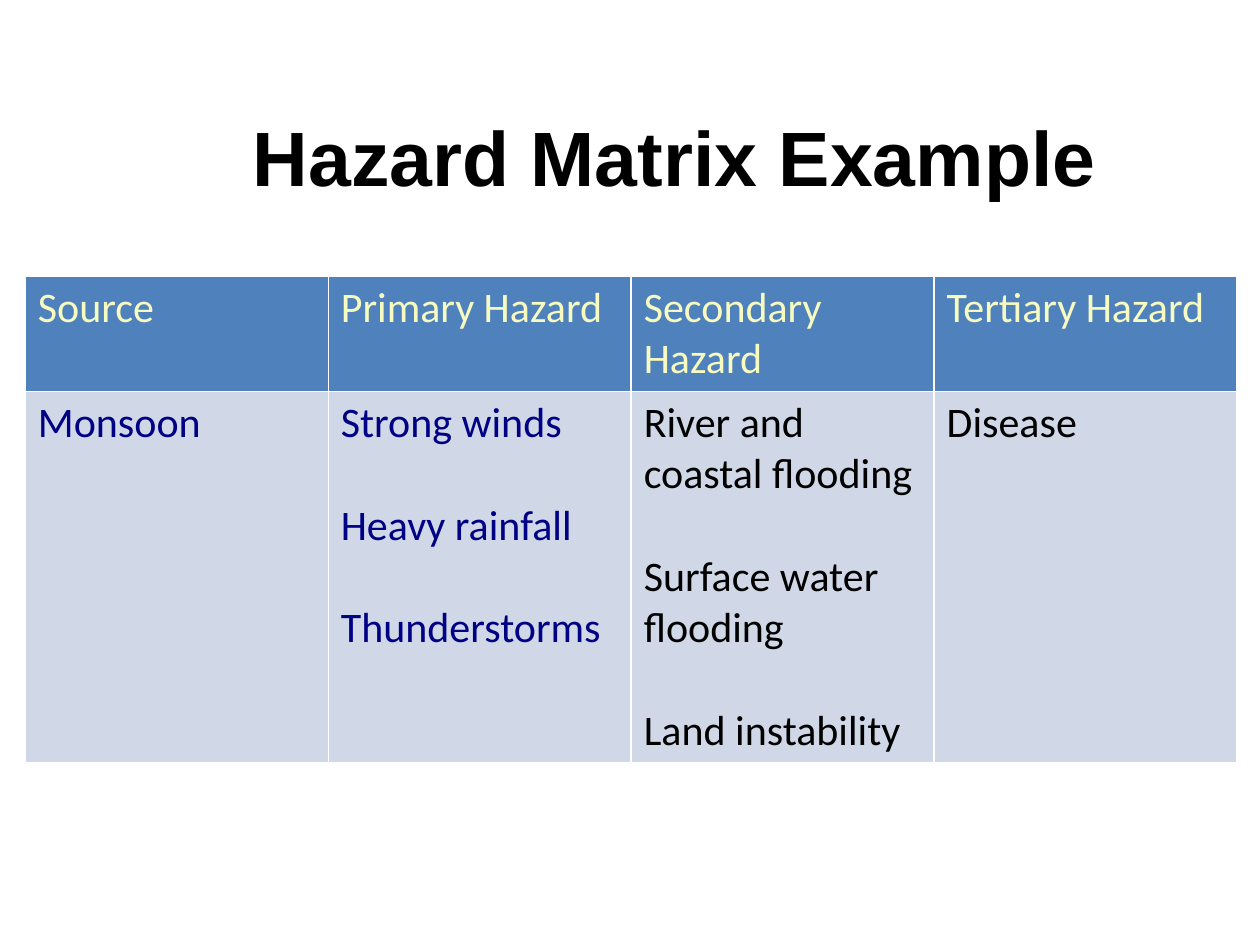
"""Build the hazard matrix slide."""
from lxml.etree import SubElement as Sub
from pptx import Presentation
from pptx.dml.color import RGBColor as Rgb
from pptx.enum.text import MSO_ANCHOR as Anchor, PP_ALIGN as Align
from pptx.oxml.ns import qn
from pptx.util import Cm, Pt

TITLE = "Hazard Matrix Example"
HEADS = ["Source", "Primary Hazard", "Secondary Hazard", "Tertiary Hazard"]
BODY = [
    ["Monsoon"],
    ["Strong winds", "Heavy rainfall", "Thunderstorms"],
    ["River and coastal flooding", "Surface water flooding", "Land instability"],
    ["Disease"],
]
INKS = ["000084", "000084", "000000", "000000"]
HEAD = {"fill": "4F81BD", "ink": "F8FBBF"}
PALE, WHITE = "D0D8E8", "FFFFFF"
HIGHS = [2.3, 7.48]
LEFT, TOP, WIDE = 0.51, 5.57, 24.43
GAP = 29.3


def color(part, code):
    part.rgb = Rgb.from_string(code)


def style(font, ink, **form):
    for key, value in form.items():
        setattr(font, key, value)
    color(font.color, ink)


def border(cell):
    props = cell._tc.get_or_add_tcPr()
    for place, side in enumerate(("lnL", "lnR", "lnT", "lnB")):
        line = Sub(props, qn(f"a:{side}"), w=str(Pt(1)))
        fill = Sub(line, qn("a:solidFill"))
        Sub(fill, qn("a:srgbClr"), val=WHITE)
        props.insert(place, line)


def write(cell, items, fill, ink):
    cell.fill.solid()
    color(cell.fill.fore_color, fill)
    border(cell)
    frame = cell.text_frame
    frame.text = "\n".join(items)
    for place, para in enumerate(frame.paragraphs):
        if place:
            para.space_before = Pt(GAP)
        for run in para.runs:
            style(run.font, ink, name="Calibri", size=Pt(24), bold=False)


def main():
    deck = Presentation()
    deck.slide_width, deck.slide_height = Cm(25.4), Cm(19.05)
    slide = deck.slides.add_slide(deck.slide_layouts[5])

    title = slide.shapes.title
    spot = {"left": 1.88, "top": 1.6, "width": 23.44, "height": 2.59}
    for key, value in spot.items():
        setattr(title, key, Cm(value))
    title.text = TITLE
    title.text_frame.vertical_anchor = Anchor.BOTTOM
    para = title.text_frame.paragraphs[0]
    para.alignment = Align.CENTER
    style(para.runs[0].font, "000000", name="Arial", size=Pt(44), bold=True)

    box = (Cm(n) for n in (LEFT, TOP, WIDE, sum(HIGHS)))
    table = slide.shapes.add_table(len(HIGHS), len(HEADS), *box).table
    for row, high in zip(table.rows, HIGHS):
        row.height = Cm(high)
    for col, (head, items, ink) in enumerate(zip(HEADS, BODY, INKS)):
        table.columns[col].width = Cm(WIDE / len(HEADS))
        write(table.cell(0, col), [head], **HEAD)
        write(table.cell(1, col), items, PALE, ink)
    deck.save("out.pptx")


if __name__ == "__main__":
    main()
